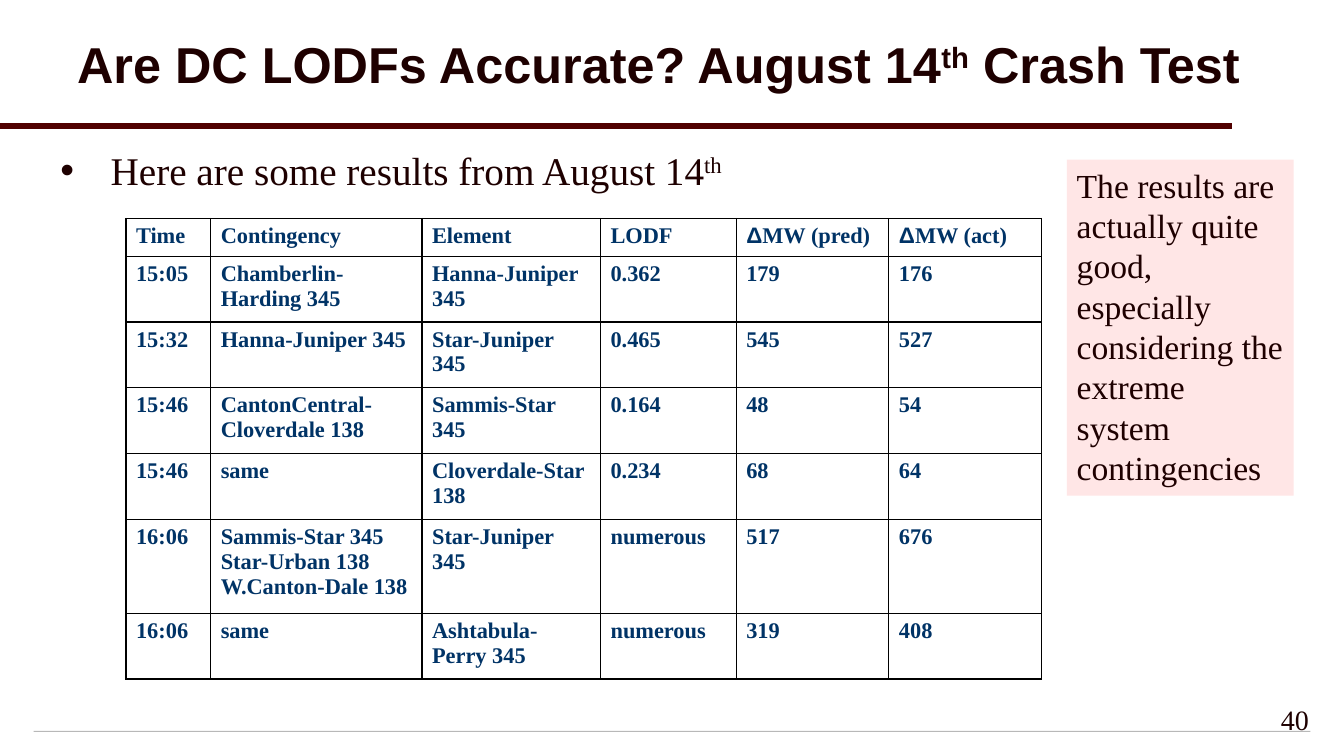
import pptx
import pptx.dml.color
import pptx.enum.shapes
import pptx.enum.text
import pptx.oxml
import pptx.oxml.ns
import pptx.util

Pt = pptx.util.Pt
PP_ALIGN = pptx.enum.text.PP_ALIGN
SHAPE = pptx.enum.shapes.MSO_SHAPE
DARK, NAVY, MAROON = "1E0000", "003366", "500000"
SERIF, SANS = "Times New Roman", "Arial"

COLUMNS = [60.5, 151, 127.5, 97, 109, 109]
ROWS = [27, 47, 47, 47, 47, 67, 47]
RESULTS = [
    ["Time", "Contingency", "Element", "LODF", "ΔMW (pred)", "ΔMW (act)"],
    ["15:05", "Chamberlin-Harding 345", "Hanna-Juniper 345", "0.362", "179", "176"],
    ["15:32", "Hanna-Juniper 345", "Star-Juniper 345", "0.465", "545", "527"],
    ["15:46", "CantonCentral-Cloverdale 138", "Sammis-Star 345", "0.164", "48", "54"],
    ["15:46", "same", "Cloverdale-Star\n138", "0.234", "68", "64"],
    ["16:06", "Sammis-Star 345\nStar-Urban 138\nW.Canton-Dale 138",
     "Star-Juniper\n345", "numerous", "517", "676"],
    ["16:06", "same", "Ashtabula-Perry 345", "numerous", "319", "408"],
]


def rgb(color):
    """Turn a hex string into a colour."""
    return pptx.dml.color.RGBColor.from_string(color)


def add_xml(parent, xml):
    """Append a DrawingML element to a parent element."""
    head, sep, tail = xml.partition(">" if "/>" not in xml.split(">")[0] + ">" else "/>")
    parent.append(pptx.oxml.parse_xml(f"{head} {pptx.oxml.ns.nsdecls('a')}{sep}{tail}"))


def style(p, size, name=SERIF, color=DARK, bold=False):
    """Set the font of a paragraph."""
    p.font.size, p.font.name, p.font.bold = Pt(size), name, bold
    p.font.color.rgb = rgb(color)


def add_runs(p, *texts):
    """Add runs to a paragraph, raising every second one."""
    for i, text in enumerate(texts):
        r = p.add_run()
        r.text = text
        if i % 2:
            r._r.get_or_add_rPr().set("baseline", "30000")


def add_text(slide, box):
    """Add a wrapping text box and return its text frame."""
    tf = slide.shapes.add_textbox(*map(Pt, box)).text_frame
    tf.word_wrap = True
    return tf


def add_block(slide, box, color):
    """Add a plain filled rectangle."""
    sp = slide.shapes.add_shape(SHAPE.RECTANGLE, *map(Pt, box))
    sp.shadow.inherit = False
    sp.fill.solid()
    sp.fill.fore_color.rgb = rgb(color)
    sp.line.fill.background()
    return sp


def add_title(slide, left, top, width, height):
    """Add the title and the rule along the bottom of its box."""
    bottom = Pt(top + height)
    rule = slide.shapes.add_connector(
        pptx.enum.shapes.MSO_CONNECTOR.STRAIGHT, 0, bottom, Pt(left + width - 32), bottom)
    rule.line.color.rgb = rgb(MAROON)
    rule.line.width = Pt(4)
    add_xml(rule._element.spPr, "<a:effectLst/>")
    tf = add_text(slide, (left, top, width, height))
    tf.vertical_anchor = pptx.enum.text.MSO_ANCHOR.MIDDLE
    p = tf.paragraphs[0]
    p.line_spacing = 0.9
    add_runs(p, "Are DC LODFs Accurate? August 14", "th", " Crash Test")
    style(p, 36, SANS, bold=True)


def add_bullet(slide, *box):
    """Add the bulleted lead-in."""
    p = add_text(slide, box).paragraphs[0]
    pPr = p._p.get_or_add_pPr()
    pPr.set("marL", str(Pt(36)))
    pPr.set("indent", str(-Pt(36)))
    add_xml(pPr, f'<a:buClr><a:srgbClr val="{DARK}"/></a:buClr>')
    add_xml(pPr, '<a:buFont typeface="Arial"/>')
    add_xml(pPr, '<a:buChar char="•"/>')
    add_runs(p, "Here are some results from August 14", "th")
    style(p, 28)


def fill_cell(cell, text):
    """Write one table cell with black borders and no fill."""
    tf = cell.text_frame
    if text.startswith("Δ"):
        for part, name in (("Δ", SANS), (text[1:], SERIF)):
            r = tf.paragraphs[0].add_run()
            r.text, r.font.name = part, name
    else:
        tf.text = text
    for p in tf.paragraphs:
        style(p, 16, color=NAVY, bold=True)
    tcPr = cell._tc.get_or_add_tcPr()
    for side in "LRTB":
        add_xml(tcPr, f'<a:ln{side} w="{Pt(1)}"><a:solidFill><a:srgbClr val="000000"/>'
                      f'</a:solidFill></a:ln{side}>')
    cell.fill.background()


def add_results(slide, left, top):
    """Add the table of predicted and actual flow changes."""
    table = slide.shapes.add_table(
        len(ROWS), len(COLUMNS), Pt(left), Pt(top), Pt(sum(COLUMNS)), Pt(sum(ROWS))).table
    table.first_row = table.horz_banding = False
    for column, width in zip(table.columns, COLUMNS):
        column.width = Pt(width)
    for row, height, texts in zip(table.rows, ROWS, RESULTS):
        row.height = Pt(height)
        for cell, text in zip(row.cells, texts):
            fill_cell(cell, text)


def add_callout(slide, *box):
    """Add the tinted remark beside the table."""
    tf = add_block(slide, box, "FFE6E6").text_frame
    tf.word_wrap = True
    tf.vertical_anchor = pptx.enum.text.MSO_ANCHOR.TOP
    p = tf.paragraphs[0]
    p.text = ("The results are actually quite good, especially considering "
              "the extreme system contingencies")
    p.alignment = PP_ALIGN.LEFT
    style(p, 24)


def add_footer(slide, left, top, width):
    """Add the thin bottom rule and the page number."""
    add_block(slide, (left, top, width, 0.72), "B8B8B8")
    p = add_text(slide, (left + width - 144, top - 24, 150, 36)).paragraphs[0]
    p.text = "40"
    p.alignment = PP_ALIGN.RIGHT
    style(p, 20)


def main():
    """Build the slide and save it."""
    prs = pptx.Presentation()
    prs.slide_width, prs.slide_height = Pt(960), Pt(540)
    slide = prs.slides.add_slide(prs.slide_layouts[6])
    add_footer(slide, 24, 522, 912)
    add_title(slide, 48, 6, 864, 84)
    add_bullet(slide, 36, 101, 612, 42)
    add_results(slide, 90, 156)
    add_callout(slide, 762, 114, 162, 240)
    prs.save("out.pptx")


if __name__ == "__main__":
    main()
